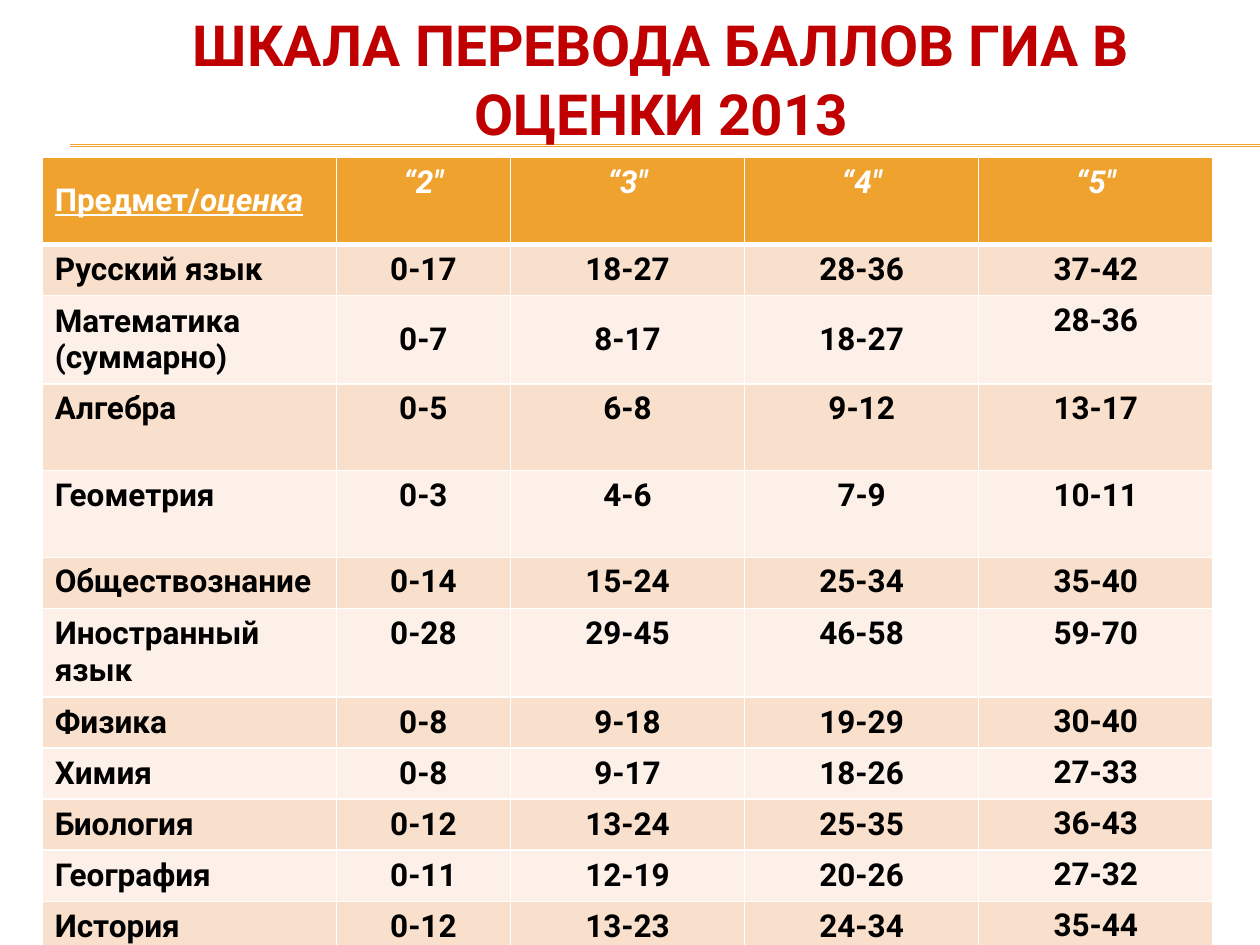
"""Build a slide with the table that converts exam points into grades."""
from lxml import etree
from pptx import Presentation
from pptx.dml.color import RGBColor
from pptx.enum.shapes import MSO_CONNECTOR
from pptx.enum.text import MSO_ANCHOR, PP_ALIGN
from pptx.oxml.ns import qn
from pptx.util import Cm, Pt

STRAIGHT = MSO_CONNECTOR.STRAIGHT
TOP, MIDDLE = MSO_ANCHOR.TOP, MSO_ANCHOR.MIDDLE
LEFT, CENTER = PP_ALIGN.LEFT, PP_ALIGN.CENTER
ORANGE, PEACH, CREAM = "F0A22E", "F9E0CD", "FCF0E8"
WHITE, BLACK, RED = "FFFFFF", "000000", "C00000"
SHORT, TALL = 1.03, 1.75
COLUMN_WIDTHS = [5.93, 3.51, 4.72, 4.72, 4.72]

ROWS = [
    (TALL, MIDDLE, ["Предмет/", "“2″", "“3″", "“4″", "“5″"]),
    (SHORT, MIDDLE, ["Русский язык", "0-17", "18-27", "28-36", "37-42"]),
    (TALL, MIDDLE, ["Математика (суммарно)", "0-7", "8-17", "18-27", "28-36"]),
    (TALL, TOP, ["Алгебра", "0-5", "6-8", "9-12", "13-17"]),
    (TALL, TOP, ["Геометрия", "0-3", "4-6", "7-9", "10-11"]),
    (SHORT, TOP, ["Обществознание", "0-14", "15-24", "25-34", "35-40"]),
    (TALL, TOP, ["Иностранный язык", "0-28", "29-45", "46-58", "59-70"]),
    (SHORT, MIDDLE, ["Физика", "0-8", "9-18", "19-29", "30-40"]),
    (SHORT, MIDDLE, ["Химия", "0-8", "9-17", "18-26", "27-33"]),
    (SHORT, MIDDLE, ["Биология", "0-12", "13-24", "25-35", "36-43"]),
    (SHORT, MIDDLE, ["География", "0-11", "12-19", "20-26", "27-32"]),
    (SHORT, MIDDLE, ["История", "0-12", "13-23", "24-34", "35-44"]),
]


def color(value):
    """Turn a hex string into a colour."""
    return RGBColor.from_string(value)


def add_run(paragraph, text, font_color, **formats):
    """Add a bold run with the given font values."""
    run = paragraph.add_run()
    run.text = text
    run.font.color.rgb = color(font_color)
    values = {"name": "Roboto", "size": Pt(18), "bold": True, **formats}
    for name, value in values.items():
        setattr(run.font, name, value)


presentation = Presentation()
presentation.slide_width = Cm(25.4)
presentation.slide_height = Cm(19.05)
slide = presentation.slides.add_slide(presentation.slide_layouts[6])

for line_top in (2.92, 2.95):
    line = slide.shapes.add_connector(
        STRAIGHT, Cm(1.42), Cm(line_top), Cm(25.4), Cm(line_top))
    line.line.color.rgb = color(ORANGE)
    line.line.width = Pt(0.75)
    etree.SubElement(line._element.spPr, qn("a:effectLst"))

title = slide.shapes.add_textbox(Cm(1.27), Cm(0.41), Cm(24.13), Cm(2.34))
title.text_frame.word_wrap = True
title.text_frame.vertical_anchor = MIDDLE
title_paragraph = title.text_frame.paragraphs[0]
title_paragraph.alignment = CENTER
add_run(title_paragraph, "ШКАЛА ПЕРЕВОДА БАЛЛОВ ГИА В ОЦЕНКИ 2013", RED, size=Pt(32.4))

table = slide.shapes.add_table(
    len(ROWS), len(COLUMN_WIDTHS), Cm(0.85), Cm(3.18),
    Cm(sum(COLUMN_WIDTHS)), Cm(sum(row[0] for row in ROWS))).table
for column, width in zip(table.columns, COLUMN_WIDTHS):
    column.width = Cm(width)

for row_index, (height, anchor, texts) in enumerate(ROWS):
    table.rows[row_index].height = Cm(height)
    is_header = row_index == 0
    row_fill = ORANGE if is_header else (CREAM, PEACH)[row_index % 2]
    for column_index, text in enumerate(texts):
        is_subject = column_index == 0
        is_top = column_index == 4 or (is_header and not is_subject)
        cell = table.cell(row_index, column_index)
        cell.vertical_anchor = TOP if is_top else anchor
        paragraph = cell.text_frame.paragraphs[0]
        paragraph.alignment = LEFT if is_subject else CENTER
        font_color = WHITE if is_header else BLACK
        add_run(paragraph, text, font_color,
                italic=is_header and not is_subject,
                underline=is_header and is_subject)
        if is_header and is_subject:
            add_run(paragraph, "оценка", font_color, italic=True, underline=True)

        properties = cell._tc.get_or_add_tcPr()
        for side in "LRTB":
            thick = (side, row_index) in (("B", 0), ("T", 1))
            border = etree.SubElement(
                properties, qn(f"a:ln{side}"), w=str(Pt(3 if thick else 1)))
            border_fill = etree.SubElement(border, qn("a:solidFill"))
            etree.SubElement(border_fill, qn("a:srgbClr"), val=WHITE)
        cell.fill.solid()
        cell.fill.fore_color.rgb = color(row_fill)

presentation.save("out.pptx")
